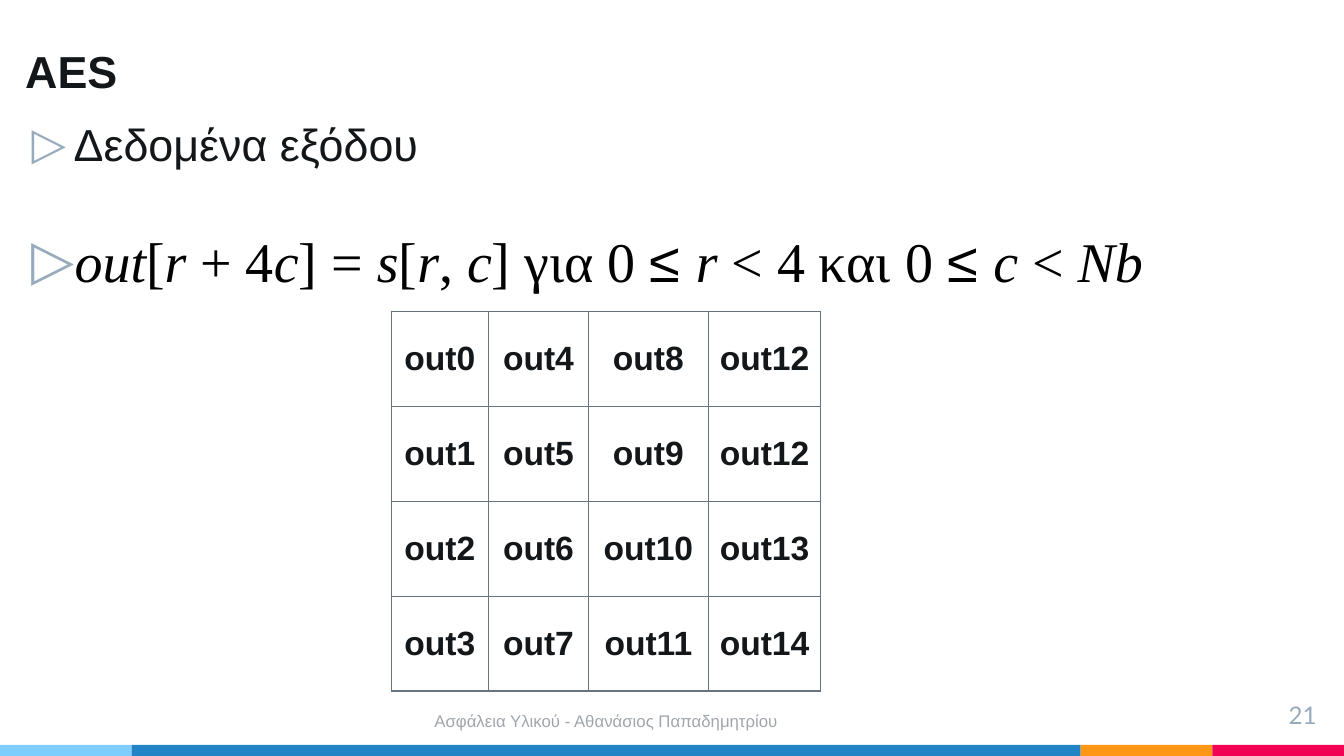
"""Build the AES output-data slide with its formula and state table."""
import dataclasses

import lxml.etree
import pptx
import pptx.dml.color
import pptx.enum.shapes
import pptx.enum.text
import pptx.oxml.ns
import pptx.util

Pt = pptx.util.Pt
Color = pptx.dml.color.RGBColor.from_string
Align = pptx.enum.text.PP_ALIGN
Anchor = pptx.enum.text.MSO_ANCHOR
qn = pptx.oxml.ns.qn


@dataclasses.dataclass(frozen=True)
class Theme:
    ink: str = "13171A"
    formula_ink: str = "000000"
    muted: str = "97ABBC"
    footer_ink: str = "A0A6AC"
    grid: str = "677480"
    paper: str = "FFFFFF"
    sky: str = "7ECEFD"
    blue: str = "2185C5"
    orange: str = "FF9715"
    red: str = "F20253"
    sans: str = "Arial"
    serif: str = "Times New Roman"
    number_font: str = "Lato"
    heading_size: float = 32
    formula_size: float = 40
    cell_size: float = 24
    number_size: float = 17.3
    footer_size: float = 12


theme = Theme()


def add_text(para, text, size, color=theme.ink, font=theme.sans, bold=False, italic=False):
    span = para.add_run()
    span.text = text
    span.font.size = Pt(size)
    span.font.name = font
    span.font.bold = bold
    span.font.italic = italic
    span.font.color.rgb = Color(color)


def place(box, left, top, width, height, anchor, inset=7.2):
    box.left, box.top, box.width, box.height = Pt(left), Pt(top), Pt(width), Pt(height)
    frame = box.text_frame
    frame.word_wrap = True
    frame.auto_size = pptx.enum.text.MSO_AUTO_SIZE.NONE
    frame.vertical_anchor = anchor
    frame.margin_left = frame.margin_right = Pt(7.2)
    frame.margin_top = frame.margin_bottom = Pt(inset)
    return frame


deck = pptx.Presentation()
deck.slide_width, deck.slide_height = Pt(960), Pt(540)
page = deck.slides.add_slide(deck.slide_layouts[1])
page.background.fill.solid()
page.background.fill.fore_color.rgb = Color(theme.paper)

strip_left = 0
for color, width in [(theme.sky, 94), (theme.blue, 678), (theme.orange, 94), (theme.red, 94)]:
    strip = page.shapes.add_shape(
        pptx.enum.shapes.MSO_SHAPE.RECTANGLE, Pt(strip_left), Pt(532), Pt(width), Pt(8))
    strip.shadow.inherit = False
    strip.fill.solid()
    strip.fill.fore_color.rgb = Color(color)
    strip.line.fill.background()
    strip_left += width

title = place(page.shapes.title, 10.8, 18, 938, 59, Anchor.BOTTOM).paragraphs[0]
title.alignment = Align.LEFT
add_text(title, "AES", theme.heading_size, bold=True)

number_box = page.shapes.add_textbox(0, 0, 0, 0)
number = place(number_box, 813, 493.2, 134.6, 33, Anchor.TOP).paragraphs[0]
number.alignment = Align.RIGHT
add_text(number, "21", theme.number_size, theme.muted, theme.number_font)

footer_box = page.shapes.add_textbox(0, 0, 0, 0)
footer = place(footer_box, 94, 500.4, 678, 29, Anchor.MIDDLE, inset=3.6).paragraphs[0]
footer.alignment = Align.CENTER
add_text(footer, "Ασφάλεια Υλικού - Αθανάσιος Παπαδημητρίου", theme.footer_size, theme.footer_ink)

body = place(page.placeholders[1], 9.4, 76.3, 938, 411, Anchor.TOP)
heading, formula = body.paragraphs[0], body.add_paragraph()
for para, space in [(heading, 6), (formula, 40)]:
    para.alignment = Align.LEFT
    para.space_before = Pt(space)
    props = para._p.get_or_add_pPr()
    props.set("marL", str(Pt(36)))
    props.set("indent", str(Pt(-30)))
    bullet_color = lxml.etree.SubElement(props, qn("a:buClr"))
    lxml.etree.SubElement(bullet_color, qn("a:srgbClr"), val=theme.muted)
    lxml.etree.SubElement(props, qn("a:buChar"), char="▷")

add_text(heading, "Δεδομένα εξόδου", theme.heading_size)
formula_parts = ["out", "[", "r ", "+ 4", "c", "] = ", "s", "[", "r", ", ", "c", "] για 0 ",
                 "≤ ", "r ", "< 4 και 0 ", "≤ ", "c ", "< ", "Nb"]
variables = {"out", "r", "c", "s", "Nb"}
for part in formula_parts:
    add_text(formula, part, theme.formula_size, theme.formula_ink,
             font=theme.sans if part == "≤ " else theme.serif,
             italic=part.strip() in variables)

state = [["out0", "out4", "out8", "out12"],
         ["out1", "out5", "out9", "out12"],
         ["out2", "out6", "out10", "out13"],
         ["out3", "out7", "out11", "out14"]]
column_widths = [69.5, 71.5, 85.5, 80.5]
row_height = 67.85
table = page.shapes.add_table(4, 4, Pt(279.4), Pt(222.3), Pt(sum(column_widths)),
                              Pt(4 * row_height)).table
table.first_row = table.horz_banding = False
for column, width in zip(table.columns, column_widths):
    column.width = Pt(width)
for row, labels in enumerate(state):
    table.rows[row].height = Pt(row_height)
    for column, label in enumerate(labels):
        cell = table.cell(row, column)
        cell.vertical_anchor = Anchor.MIDDLE
        for side in ("a:lnL", "a:lnR", "a:lnT", "a:lnB"):
            edge = lxml.etree.SubElement(cell._tc.get_or_add_tcPr(), qn(side), w=str(Pt(1)))
            edge_fill = lxml.etree.SubElement(edge, qn("a:solidFill"))
            lxml.etree.SubElement(edge_fill, qn("a:srgbClr"), val=theme.grid)
        cell.fill.solid()
        cell.fill.fore_color.rgb = Color(theme.paper)
        para = cell.text_frame.paragraphs[0]
        para.alignment = Align.CENTER
        add_text(para, label, theme.cell_size, bold=True)

deck.save("out.pptx")
